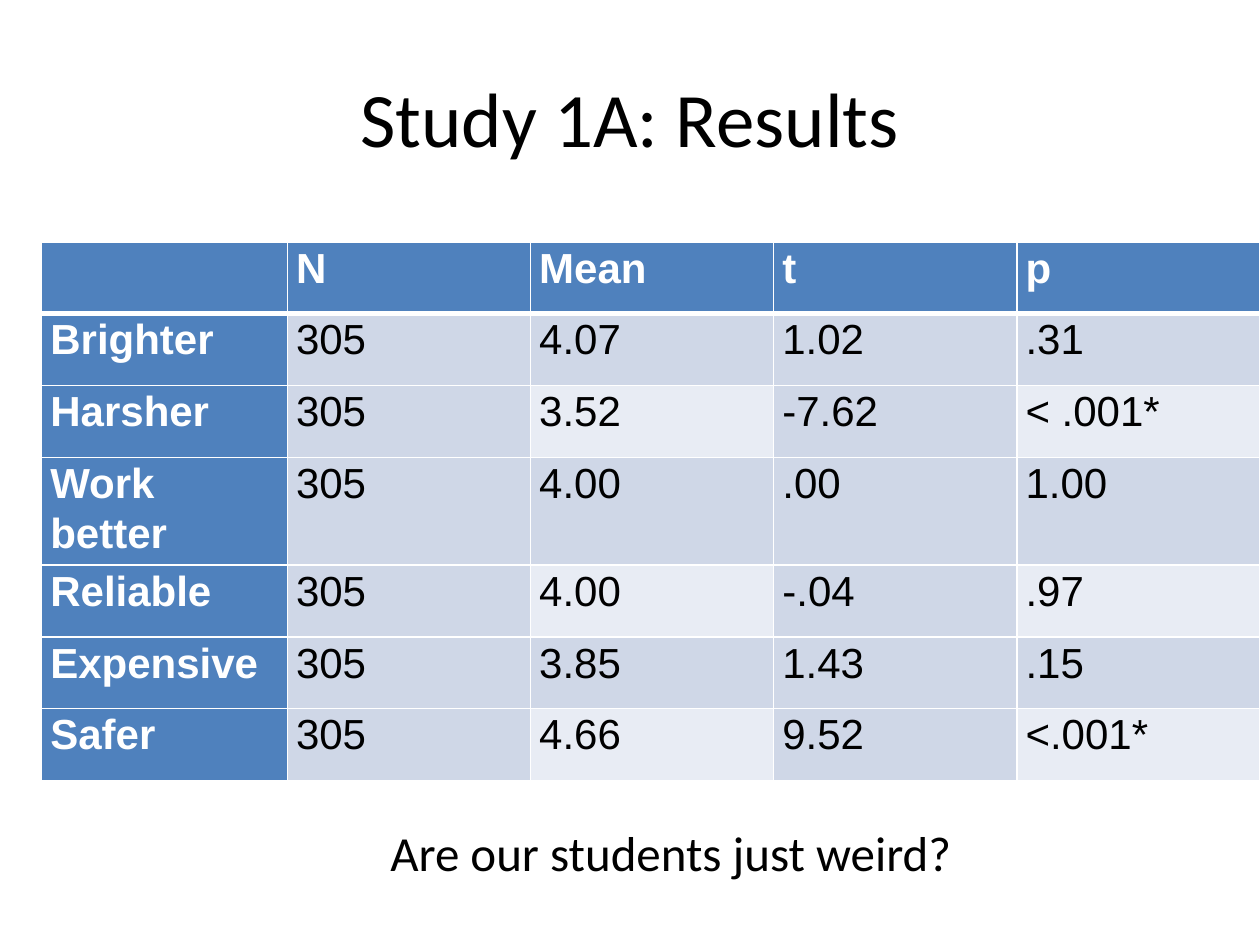
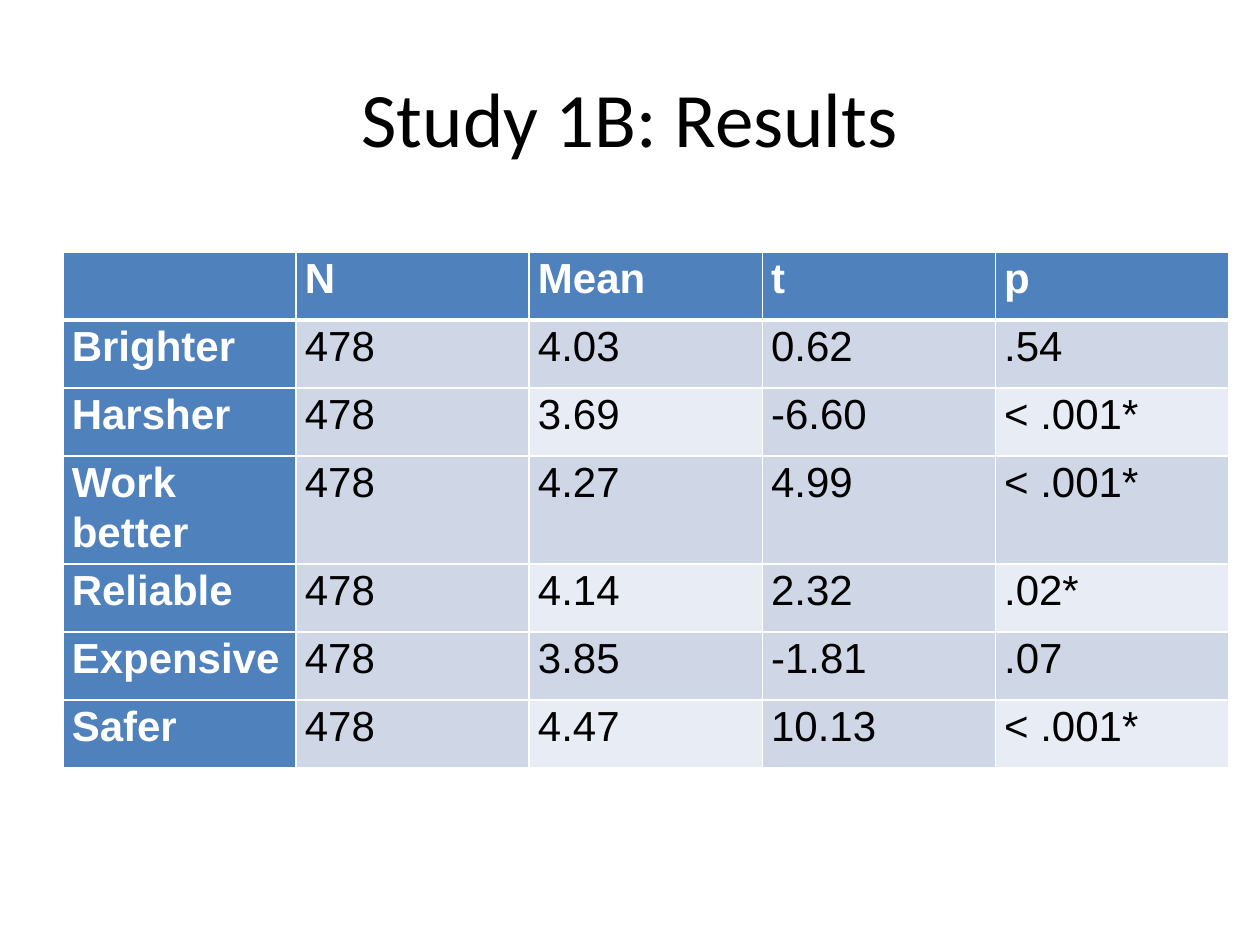
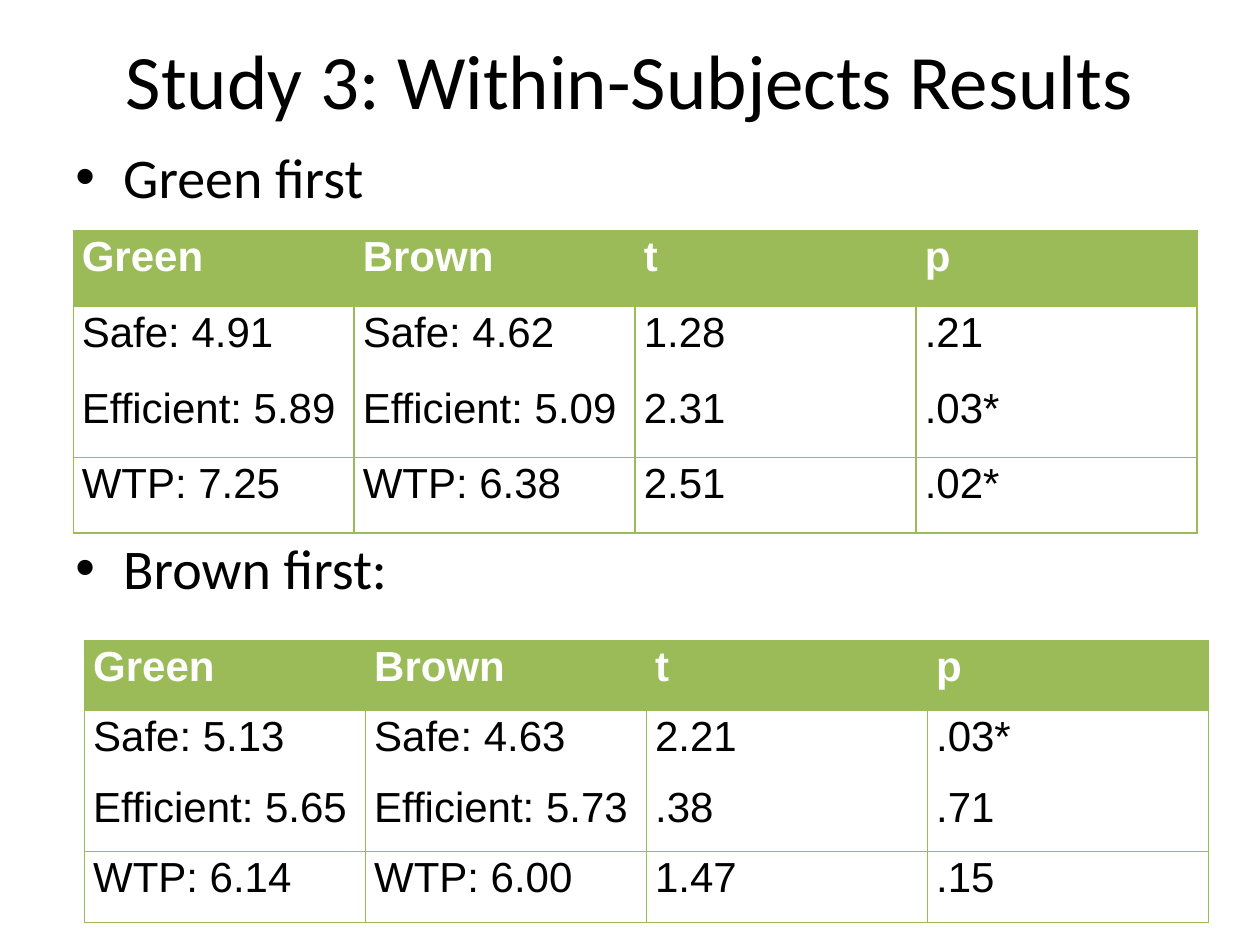
import pptx
import pptx.dml.color
import pptx.enum.text
import pptx.oxml.ns
import pptx.util
from lxml import etree

Inches = pptx.util.Inches
Pt = pptx.util.Pt
ALIGN = pptx.enum.text.PP_ALIGN
ANCHOR = pptx.enum.text.MSO_ANCHOR

BLACK, WHITE = "000000", "FFFFFF"
BLUE, BAND, PALE = "4F81BD", "CFD7E7", "E8ECF4"
GREEN = "9BBB59"
HEAD = ["N", "Mean", "t", "p"]
TRAITS = ["Brighter", "Harsher", "Work better", "Reliable", "Expensive", "Safer"]

STUDY_A = [
    ["305", "4.07", "1.02", ".31"],
    ["305", "3.52", "-7.62", "< .001*"],
    ["305", "4.00", ".00", "1.00"],
    ["305", "4.00", "-.04", ".97"],
    ["305", "3.85", "1.43", ".15"],
    ["305", "4.66", "9.52", "<.001*"],
]
STUDY_B = [
    ["478", "4.03", "0.62", ".54"],
    ["478", "3.69", "-6.60", "< .001*"],
    ["478", "4.27", "4.99", "< .001*"],
    ["478", "4.14", "2.32", ".02*"],
    ["478", "3.85", "-1.81", ".07"],
    ["478", "4.47", "10.13", "< .001*"],
]
PAIRS = ["Green", "Brown", "t", "p"]
GREEN_FIRST = [
    PAIRS,
    ["Safe: 4.91", "Safe: 4.62", "1.28", ".21"],
    ["Efficient: 5.89", "Efficient: 5.09", "2.31", ".03*"],
    ["WTP: 7.25", "WTP: 6.38", "2.51", ".02*"],
]
BROWN_FIRST = [
    PAIRS,
    ["Safe: 5.13", "Safe: 4.63", "2.21", ".03*"],
    ["Efficient: 5.65", "Efficient: 5.73", ".38", ".71"],
    ["WTP: 6.14", "WTP: 6.00", "1.47", ".15"],
]


def paint(code):
    """Turn a hex string into a colour."""
    return pptx.dml.color.RGBColor.from_string(code)


def write(para, text, size=24, font="Calibri", color=BLACK, bold=False,
          align=None, before=None, lead=None, bullet=False):
    """Write one formatted run into a paragraph."""
    run = para.add_run()
    run.text = text
    run.font.size, run.font.name, run.font.bold = Pt(size), font, bold
    run.font.color.rgb = paint(color)
    if align is not None:
        para.alignment = align
    if before is not None:
        para.space_before = Pt(before)
    if lead is not None:
        para.line_spacing = lead
    if bullet:
        props = para._p.get_or_add_pPr()
        props.set("marL", str(Inches(0.38)))
        props.set("indent", str(-Inches(0.38)))
        for tag, key, value in (("a:buFont", "typeface", "Arial"), ("a:buChar", "char", "•")):
            etree.SubElement(props, pptx.oxml.ns.qn(tag)).set(key, value)


def add_box(slide, box, anchor=ANCHOR.TOP):
    """Add a wrapping text box and return its frame."""
    frame = slide.shapes.add_textbox(*map(Inches, box)).text_frame
    frame.word_wrap = True
    frame.vertical_anchor = anchor
    return frame


def add_title(slide, text, top=0.3):
    """Add the centred slide title."""
    frame = add_box(slide, (0.5, top, 9, 1.25), ANCHOR.MIDDLE)
    write(frame.paragraphs[0], text, size=44, align=ALIGN.CENTER)


def add_edge(cell, side, color, width):
    """Draw one border of a cell, or clear it when color is None."""
    props = cell._tc.get_or_add_tcPr()
    line = etree.SubElement(props, pptx.oxml.ns.qn(f"a:ln{side}"), w=str(Pt(width)))
    if color is None:
        etree.SubElement(line, pptx.oxml.ns.qn("a:noFill"))
    else:
        fill = etree.SubElement(line, pptx.oxml.ns.qn("a:solidFill"))
        etree.SubElement(fill, pptx.oxml.ns.qn("a:srgbClr"), val=color)


def add_grid(slide, rows, at, widths, height, style):
    """Add a table whose cells take fill, bold and edges from style(row, col)."""
    left, top = at
    shape = slide.shapes.add_table(
        len(rows), len(widths), Inches(left), Inches(top),
        Inches(sum(widths)), Inches(height * len(rows)))
    table = shape.table
    table.first_row = table.horz_banding = False
    for col, width in zip(table.columns, widths):
        col.width = Inches(width)
    for r, texts in enumerate(rows):
        table.rows[r].height = Inches(height)
        for c, text in enumerate(texts):
            cell = table.cell(r, c)
            cell.margin_left = cell.margin_right = Inches(0.07)
            cell.margin_top = cell.margin_bottom = 0
            fill, bold, edges = style(r, c)
            for side, (color, width) in edges.items():
                add_edge(cell, side, color, width)
            if fill:
                cell.fill.solid()
                cell.fill.fore_color.rgb = paint(fill)
            else:
                cell.fill.background()
            if text:
                write(cell.text_frame.paragraphs[0], text, font="Arial", lead=1.07,
                      color=WHITE if bold else BLACK, bold=bold)


def blue_style(r, c):
    """Style a cell of a trait table."""
    edges = dict.fromkeys("LRTB", (WHITE, 1))
    if r < 2:
        edges["B" if r == 0 else "T"] = (WHITE, 3)
    if r == 0 or c == 0:
        return BLUE, True, edges
    return (BAND if r % 2 or c % 2 else PALE), False, edges


def green_style(r, c):
    """Style a cell of a pair table, with no rule between its first two data rows."""
    edges = dict.fromkeys("LRTB", (GREEN, 0.75))
    if r in (1, 2):
        edges["B" if r == 1 else "T"] = (None, 0.75)
    return (GREEN if r == 0 else None), r == 0, edges


def trait_slide(slide, title, data, at, widths, height):
    """Build a slide with one table of trait ratings."""
    add_title(slide, title)
    rows = [["", *HEAD]] + [[name, *vals] for name, vals in zip(TRAITS, data)]
    add_grid(slide, rows, at, widths, height, blue_style)


def pair_slide(slide):
    """Build the slide that compares both orders."""
    add_title(slide, "Study 3: Within-Subjects Results", top=0)
    frame = add_box(slide, (0.5, 1.08, 9, 4.95))
    write(frame.paragraphs[0], "Green first", size=32, bullet=True)
    write(frame.add_paragraph(), "Brown first:", size=32, before=185, bullet=True)
    widths = [2.23] * 4
    add_grid(slide, GREEN_FIRST, (0.58, 1.83), widths, 0.6, green_style)
    add_grid(slide, BROWN_FIRST, (0.67, 5.08), widths, 0.56, green_style)


def main():
    """Build and save the deck."""
    deck = pptx.Presentation()
    deck.slide_width, deck.slide_height = Inches(10), Inches(7.5)
    first, second, third = (deck.slides.add_slide(deck.slide_layouts[6]) for _ in range(3))
    trait_slide(first, "Study 1A: Results", STUDY_A, (0.33, 1.92),
                [1.95] + [1.93] * 4, 0.57)
    note = add_box(first, (3, 6.48, 4.83, 0.57))
    write(note.paragraphs[0], "Are our students just weird?", size=28)
    trait_slide(second, "Study 1B: Results", STUDY_B, (0.5, 2), [1.85] * 5, 0.54)
    pair_slide(third)
    deck.save("out.pptx")


if __name__ == "__main__":
    main()
